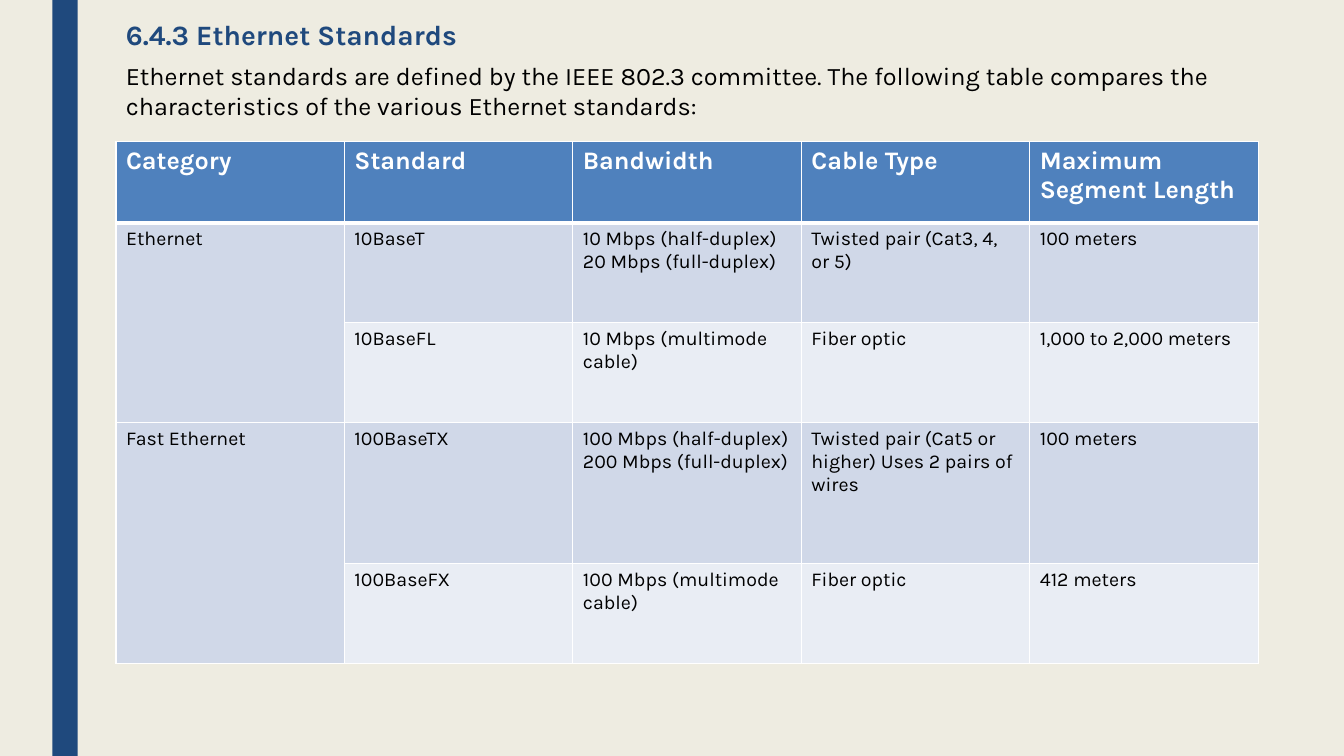
from copy import deepcopy
from dataclasses import dataclass
from typing import Any

from lxml.etree import SubElement as Sub
from pptx import Presentation
from pptx.dml.color import RGBColor as RGB
from pptx.enum.shapes import MSO_SHAPE as Shape
from pptx.enum.text import MSO_ANCHOR as Anchor
from pptx.oxml.ns import qn
from pptx.util import Inches, Pt


@dataclass(frozen=True)
class Theme:
    face: str = "Karla"
    paper: str = "EEECE1"
    navy: str = "1F497D"
    blue: str = "4F81BD"
    white: str = "FFFFFF"
    black: str = "000000"
    bands: tuple[str, str] = ("E9EDF4", "D0D8E8")
    title: int = 20
    body: int = 18
    cell: int = 14
    thin: int = 1
    thick: int = 3


@dataclass(frozen=True)
class Style:
    size: int
    color: str
    bold: bool = False


@dataclass(frozen=True)
class Label:
    text: str
    box: tuple[float, float, float, float]
    style: Style
    lead: float = 1.0


THEME = Theme()
HEAD = Style(THEME.body, THEME.white, True)
CELL = Style(THEME.cell, THEME.black)

LABELS = [
    Label("6.4.3 Ethernet Standards", (1.15, 0.17, 10.5, 0.4),
          Style(THEME.title, THEME.navy, True), 0.89),
    Label("Ethernet standards are defined by the IEEE 802.3 committee. "
          "The following table compares the characteristics of the various "
          "Ethernet standards:", (1.15, 0.55, 11.5, 0.7),
          Style(THEME.body, THEME.black)),
]

ROWS = [
    ("Category", "Standard", "Bandwidth", "Cable Type",
     "Maximum Segment Length"),
    ("Ethernet", "10BaseT", "10 Mbps (half-duplex)\n20 Mbps (full-duplex)",
     "Twisted pair (Cat3, 4, or 5)", "100 meters"),
    ("", "10BaseFL", "10 Mbps (multimode cable)", "Fiber optic",
     "1,000 to 2,000 meters"),
    ("Fast Ethernet", "100BaseTX",
     "100 Mbps (half-duplex)\n200 Mbps (full-duplex)",
     "Twisted pair (Cat5 or higher) Uses 2 pairs of wires", "100 meters"),
    ("", "100BaseFX", "100 Mbps (multimode cable)", "Fiber optic",
     "412 meters"),
]
HEIGHTS = (0.81, 0.99, 0.99, 1.4, 0.99)
WIDTH = 11.33


def paint(fill: Any, color: str) -> None:
    fill.solid()
    fill.fore_color.rgb = RGB.from_string(color)


def write(para: Any, text: str, style: Style) -> None:
    """Fill a paragraph; a newline becomes a line break."""
    para.text = text
    form = {"name": THEME.face, "size": Pt(style.size), "bold": style.bold}
    for run in para.runs:
        for key, value in form.items():
            setattr(run.font, key, value)
        run.font.color.rgb = RGB.from_string(style.color)
    # Line breaks take the type size of the text around them
    for gap in para._p.findall(qn("a:br")):
        gap.append(deepcopy(para.runs[0]._r.rPr))


def edge(cell: Any, sides: dict[str, int]) -> None:
    """Draw the cell borders, given as side and width in points."""
    props = cell._tc.get_or_add_tcPr()
    for side, width in sides.items():
        line = Sub(props, qn(f"a:ln{side}"), w=str(Pt(width)))
        Sub(Sub(line, qn("a:solidFill")), qn("a:srgbClr"), val=THEME.white)


def label(slide: Any, item: Label) -> None:
    frame = slide.shapes.add_textbox(*map(Inches, item.box)).text_frame
    form = {"word_wrap": True, "vertical_anchor": Anchor.TOP}
    for key, value in form.items():
        setattr(frame, key, value)
    para = frame.paragraphs[0]
    write(para, item.text, item.style)
    para.line_spacing = item.lead


def grid(slide: Any) -> None:
    count = len(ROWS[0])
    table = slide.shapes.add_table(
        len(ROWS), count, Inches(1.15), Inches(1.4),
        Inches(WIDTH), Inches(sum(HEIGHTS))).table
    for col in table.columns:
        col.width = Inches(WIDTH / count)
    for r, (row, height) in enumerate(zip(ROWS, HEIGHTS)):
        table.rows[r].height = Inches(height)
        for c, text in enumerate(row):
            cell = table.cell(r, c)
            # The rule under the header is heavier
            edge(cell, {"L": THEME.thin, "R": THEME.thin,
                        "T": THEME.thick if r == 1 else THEME.thin,
                        "B": THEME.thick if r == 0 else THEME.thin})
            band = THEME.bands[r % 2 if text else 1]
            paint(cell.fill, band if r else THEME.blue)
            if text:
                write(cell.text_frame.paragraphs[0], text,
                      CELL if r else HEAD)
    # Each category spans two standards
    for r in range(1, len(ROWS), 2):
        table.cell(r, 0).merge(table.cell(r + 1, 0))


def main() -> None:
    deck = Presentation()
    deck.slide_width, deck.slide_height = Inches(13.33), Inches(7.5)
    slide = deck.slides.add_slide(deck.slide_layouts[6])
    paint(slide.background.fill, THEME.paper)

    # Side bar
    bar = slide.shapes.add_shape(Shape.RECTANGLE, Inches(0.52), 0,
                                 Inches(0.25), deck.slide_height)
    bar.shadow.inherit = False
    paint(bar.fill, THEME.navy)
    bar.line.fill.background()

    # Heading, table and lead-in
    grid(slide)
    for item in LABELS:
        label(slide, item)
    deck.save("out.pptx")


if __name__ == "__main__":
    main()
